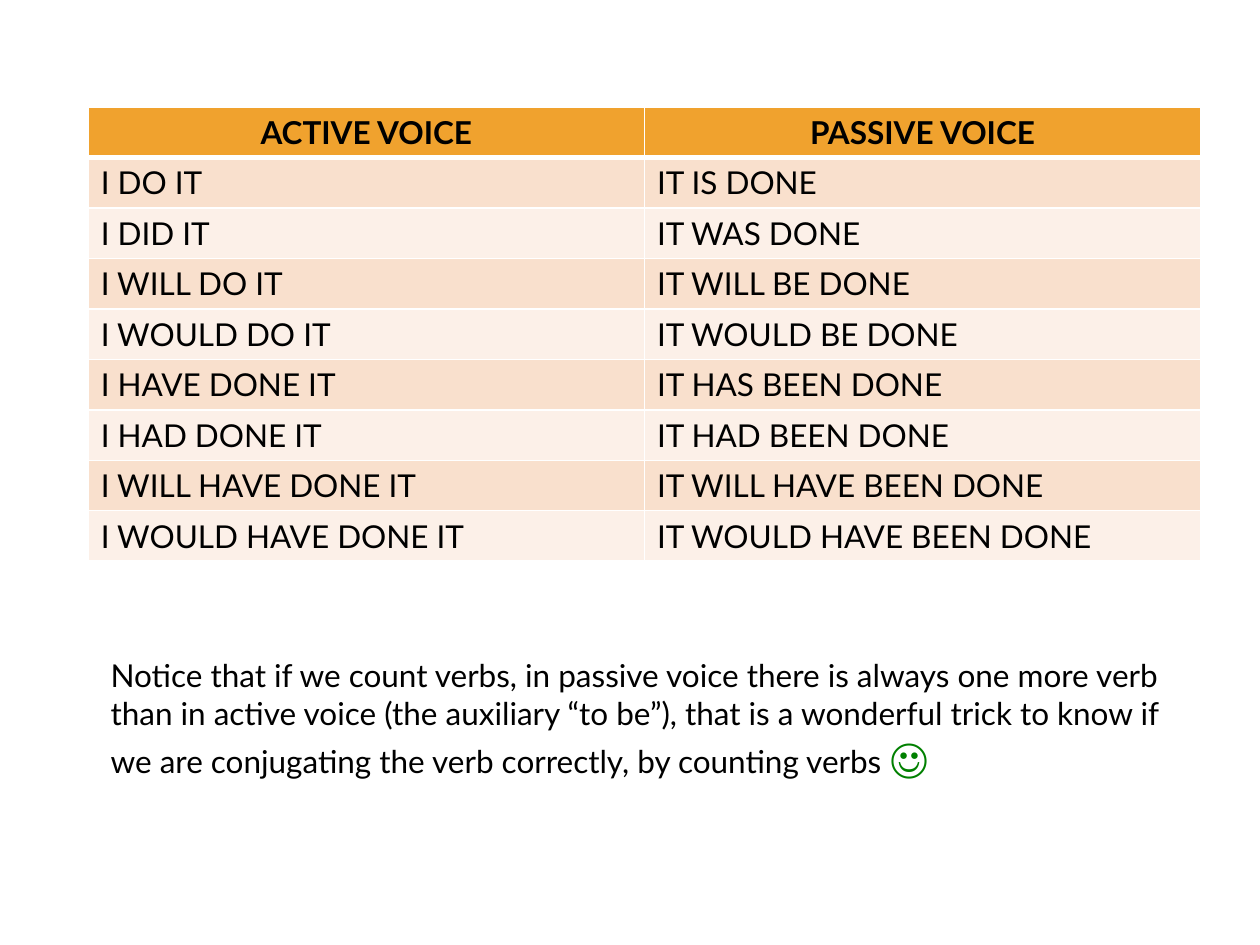
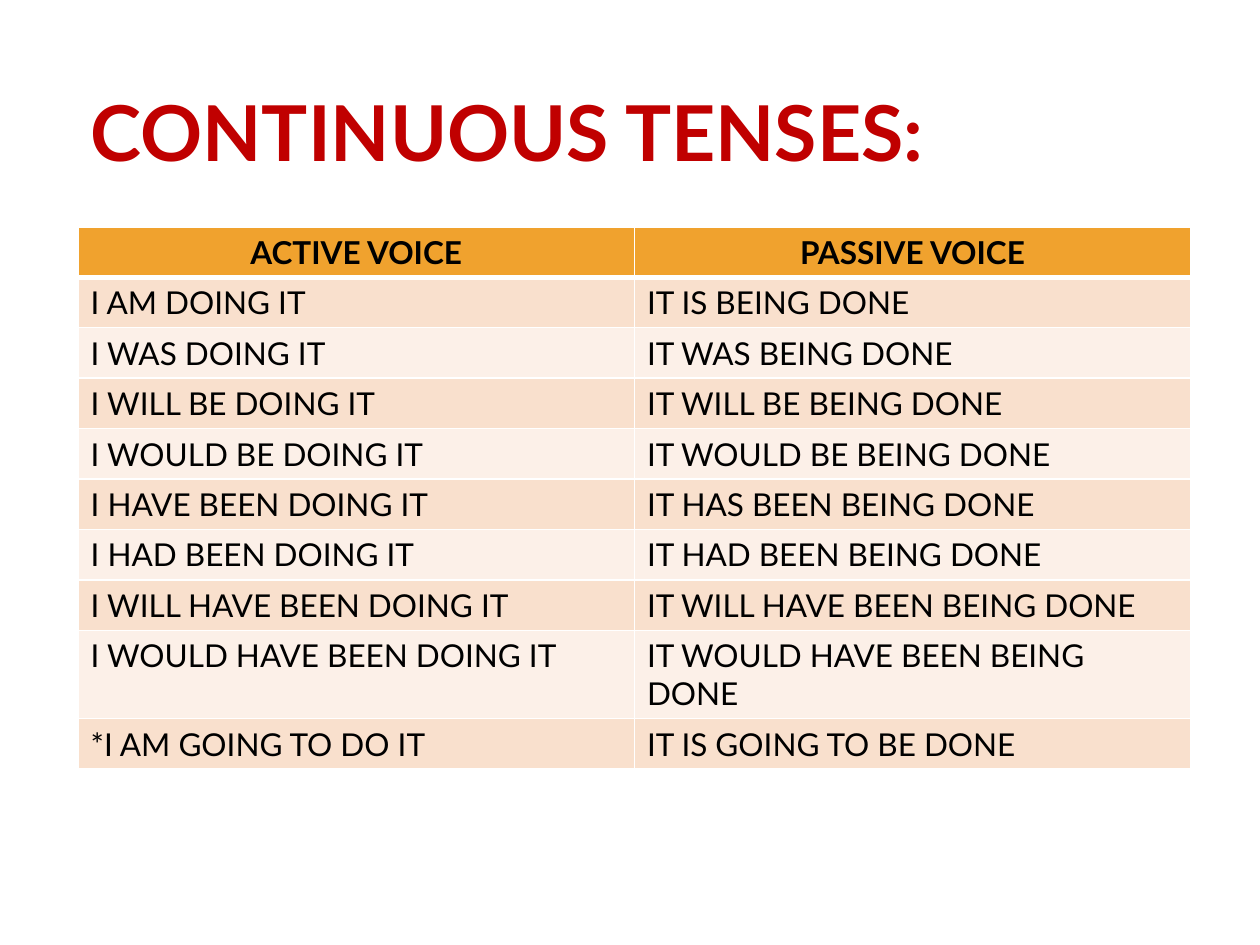
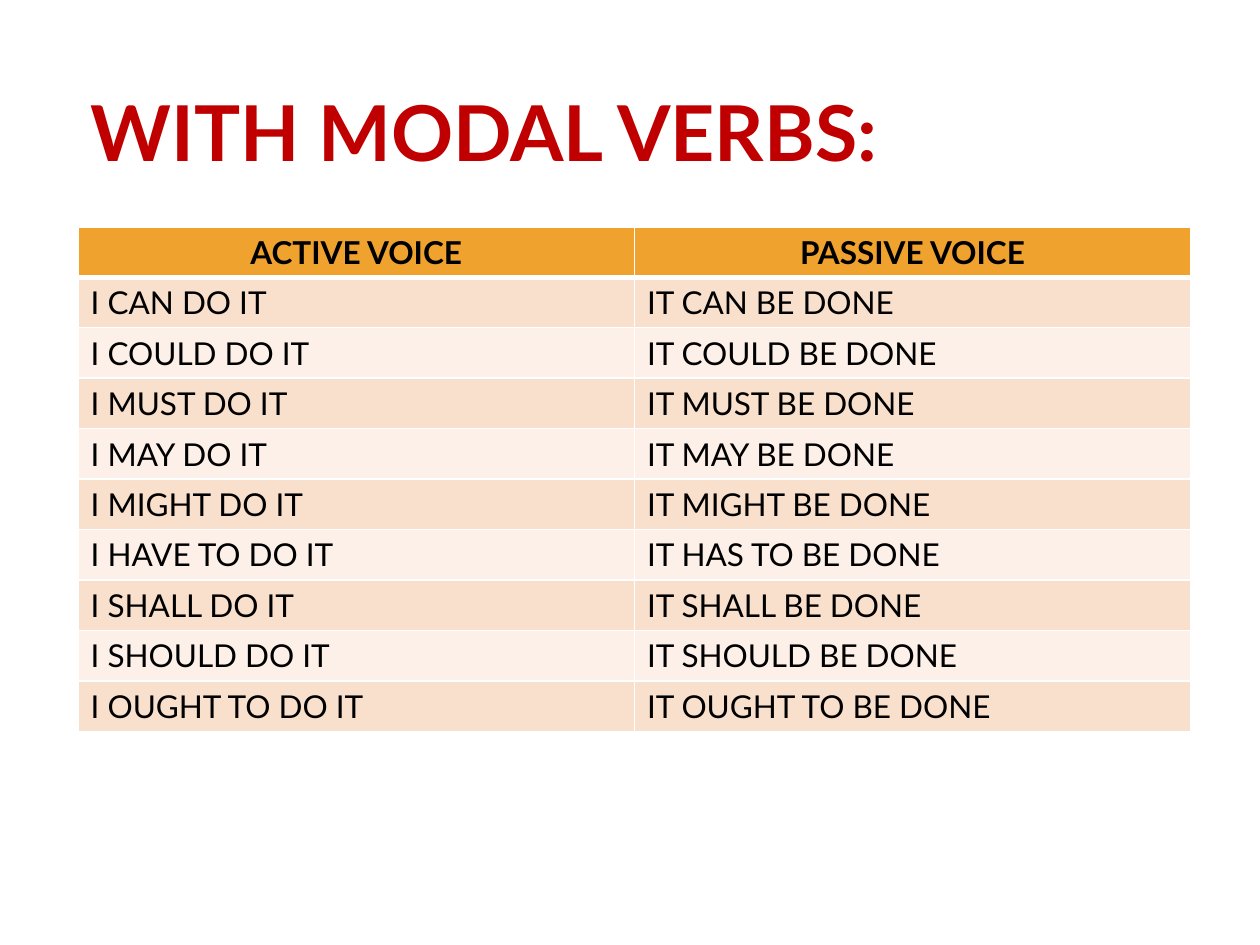
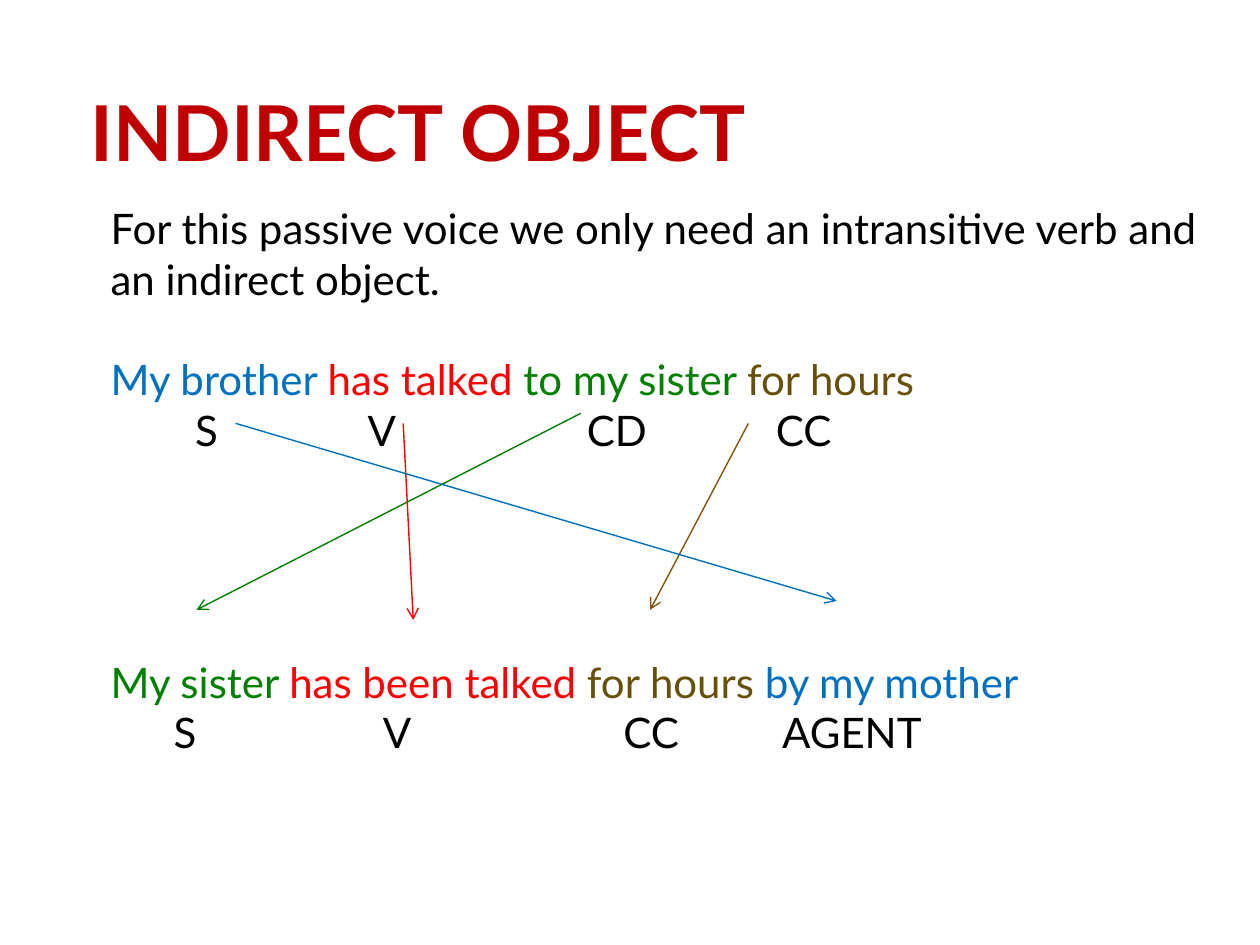
from dataclasses import dataclass
from typing import NamedTuple

from lxml import etree
from pptx import Presentation
from pptx.dml.color import RGBColor
from pptx.enum.shapes import MSO_CONNECTOR
from pptx.enum.text import MSO_AUTO_SIZE, PP_ALIGN
from pptx.oxml.ns import qn
from pptx.util import Inches, Pt

STRAIGHT = MSO_CONNECTOR.STRAIGHT
GROW_SHAPE = MSO_AUTO_SIZE.SHAPE_TO_FIT_TEXT
CENTER, LEFT = PP_ALIGN.CENTER, PP_ALIGN.LEFT
BLANK_LAYOUT = 6


# Theme
@dataclass(frozen=True)
class Theme:
    font: str = "Lato"
    text: str = "000000"
    title: str = "C00000"
    header: str = "F0A22E"
    bands: tuple[str, str] = ("F9E0CD", "FCF0E8")
    border: str = "FFFFFF"
    blue: str = "0070C0"
    red: str = "FF0000"
    green: str = "008000"
    olive: str = "695008"
    brown: str = "85540A"
    title_size: int = 44
    large_size: int = 24
    body_size: int = 18
    thin_border: int = 1
    thick_border: int = 3
    arrow_width: float = 0.79


THEME = Theme()
LINE_HEIGHT = 1.2 * THEME.large_size
ROW_HEIGHT = 0.4
TABLE_WIDTH = 8.83


class Box(NamedTuple):
    left: float
    top: float
    width: float
    height: float


class Span(NamedTuple):
    text: str
    color: str = THEME.text
    size: int = THEME.large_size
    bold: bool = False


class Line(NamedTuple):
    spans: list[Span]
    blank_lines_before: int = 0
    tab_stops: tuple[float, ...] = ()


class Arrow(NamedTuple):
    start: tuple[float, float]
    end: tuple[float, float]
    color: str


class VoiceTable(NamedTuple):
    left: float
    top: float
    rows: list[tuple[str, str]]


TITLE_BOX = Box(0.62, 0.62, 8.91, 0.84)
HEADINGS = ("ACTIVE VOICE", "PASSIVE VOICE")

# Slide contents
SIMPLE_TENSES = VoiceTable(0.7, 0.85, [
    ("I DO IT", "IT IS DONE"),
    ("I DID IT", "IT WAS DONE"),
    ("I WILL DO IT", "IT WILL BE DONE"),
    ("I WOULD DO IT", "IT WOULD BE DONE"),
    ("I HAVE DONE IT", "IT HAS BEEN DONE"),
    ("I HAD DONE IT", "IT HAD BEEN DONE"),
    ("I WILL HAVE DONE IT", "IT WILL HAVE BEEN DONE"),
    ("I WOULD HAVE DONE IT", "IT WOULD HAVE BEEN DONE"),
])
CONTINUOUS_TENSES = VoiceTable(0.62, 1.8, [
    ("I AM DOING IT", "IT IS BEING DONE"),
    ("I WAS DOING IT", "IT WAS BEING DONE"),
    ("I WILL BE DOING IT", "IT WILL BE BEING DONE"),
    ("I WOULD BE DOING IT", "IT WOULD BE BEING DONE"),
    ("I HAVE BEEN DOING IT", "IT HAS BEEN BEING DONE"),
    ("I HAD BEEN DOING IT", "IT HAD BEEN BEING DONE"),
    ("I WILL HAVE BEEN DOING IT", "IT WILL HAVE BEEN BEING DONE"),
    ("I WOULD HAVE BEEN DOING IT", "IT WOULD HAVE BEEN BEING DONE"),
    ("*I AM GOING TO DO IT", "IT IS GOING TO BE DONE"),
])
MODAL_VERBS = VoiceTable(0.62, 1.8, [
    ("I CAN DO IT", "IT CAN BE DONE"),
    ("I COULD DO IT", "IT COULD BE DONE"),
    ("I MUST DO IT", "IT MUST BE DONE"),
    ("I MAY DO IT", "IT MAY BE DONE"),
    ("I MIGHT DO IT", "IT MIGHT BE DONE"),
    ("I HAVE TO DO IT", "IT HAS TO BE DONE"),
    ("I SHALL DO IT", "IT SHALL BE DONE"),
    ("I SHOULD DO IT", "IT SHOULD BE DONE"),
    ("I OUGHT TO DO IT", "IT OUGHT TO BE DONE"),
])
VERB_COUNT_NOTE = [Line([
    Span("Notice that if we count verbs, in passive voice there is always one more "
         "verb than in active voice (the auxiliary “to be”), that is a wonderful "
         "trick to know if we are conjugating the verb correctly, by counting verbs ",
         size=THEME.body_size),
    Span("☺", THEME.green, bold=True),
])]
INDIRECT_OBJECT_LINES = [
    Line([Span("For this passive voice we only need an intransitive verb and "
               "an indirect object.")]),
    Line([Span("My brother ", THEME.blue), Span("has talked ", THEME.red),
          Span("to my sister ", THEME.green), Span("for hours", THEME.olive)],
         blank_lines_before=1),
    Line([Span("\tS\tV\tCD\tCC")], tab_stops=(0.67, 2.04, 3.78, 5.28)),
    Line([Span("My sister ", THEME.green), Span("has been talked ", THEME.red),
          Span("for hours ", THEME.olive), Span("by my mother", THEME.blue)],
         blank_lines_before=4),
    Line([Span("\tS\tV\tCC\tAGENT")], tab_stops=(0.5, 2.16, 4.07, 5.33)),
]
WORD_ORDER_ARROWS = [
    Arrow((4.61, 3.28), (1.56, 4.84), THEME.green),
    Arrow((3.2, 3.36), (3.28, 4.92), THEME.red),
    Arrow((5.94, 3.36), (5.16, 4.84), THEME.brown),
    Arrow((1.87, 3.36), (6.64, 4.77), THEME.blue),
]


# Text
def add_span(paragraph, span: Span) -> None:
    run = paragraph.add_run()
    run.text = span.text
    run.font.color.rgb = RGBColor.from_string(span.color)
    formats = {"name": THEME.font, "size": Pt(span.size), "bold": span.bold}
    for name, value in formats.items():
        setattr(run.font, name, value)


def set_tab_stops(paragraph, stops: tuple[float, ...]) -> None:
    properties = paragraph._p.get_or_add_pPr()
    tab_list = etree.SubElement(properties, qn("a:tabLst"))
    for stop in stops:
        etree.SubElement(tab_list, qn("a:tab"), pos=str(Inches(stop)), algn="l")


def add_text(slide, box: Box, lines: list[Line]) -> None:
    frame = slide.shapes.add_textbox(*map(Inches, box)).text_frame
    frame.word_wrap = True
    frame.auto_size = GROW_SHAPE
    for index, line in enumerate(lines):
        paragraph = frame.add_paragraph() if index else frame.paragraphs[0]
        if line.blank_lines_before:
            paragraph.space_before = Pt(line.blank_lines_before * LINE_HEIGHT)
        if line.tab_stops:
            set_tab_stops(paragraph, line.tab_stops)
        for span in line.spans:
            add_span(paragraph, span)


def add_title(slide, text: str) -> None:
    title = Span(text, THEME.title, THEME.title_size, bold=True)
    add_text(slide, TITLE_BOX, [Line([title])])


# Tables
def set_borders(cell, row: int) -> None:
    widths = {"a:lnL": THEME.thin_border, "a:lnR": THEME.thin_border,
              "a:lnT": THEME.thick_border if row == 1 else THEME.thin_border,
              "a:lnB": THEME.thick_border if row == 0 else THEME.thin_border}
    properties = cell._tc.get_or_add_tcPr()
    for position, (tag, width) in enumerate(widths.items()):
        border = etree.Element(qn(tag), w=str(Pt(width)))
        fill = etree.SubElement(border, qn("a:solidFill"))
        etree.SubElement(fill, qn("a:srgbClr"), val=THEME.border)
        properties.insert(position, border)


def add_voice_table(slide, content: VoiceTable) -> None:
    rows = [HEADINGS, *content.rows]
    box = Box(content.left, content.top, TABLE_WIDTH, ROW_HEIGHT * len(rows))
    table = slide.shapes.add_table(
        len(rows), len(HEADINGS), *map(Inches, box)).table
    for row, texts in enumerate(rows):
        is_header = row == 0
        color = THEME.header if is_header else THEME.bands[(row - 1) % 2]
        for column, text in enumerate(texts):
            cell = table.cell(row, column)
            cell.fill.solid()
            cell.fill.fore_color.rgb = RGBColor.from_string(color)
            set_borders(cell, row)
            paragraph = cell.text_frame.paragraphs[0]
            paragraph.alignment = CENTER if is_header else LEFT
            add_span(paragraph, Span(text, size=THEME.body_size, bold=is_header))


# Arrows
def add_arrow(slide, arrow: Arrow) -> None:
    connector = slide.shapes.add_connector(
        STRAIGHT, *map(Inches, arrow.start + arrow.end))
    connector.line.color.rgb = RGBColor.from_string(arrow.color)
    connector.line.width = Pt(THEME.arrow_width)
    properties = connector._element.spPr
    etree.SubElement(properties.find(qn("a:ln")), qn("a:tailEnd"), type="arrow")
    etree.SubElement(properties, qn("a:effectLst"))


def main() -> None:
    presentation = Presentation()
    presentation.slide_width, presentation.slide_height = Inches(10), Inches(7.5)
    layout = presentation.slide_layouts[BLANK_LAYOUT]

    # Simple tenses
    slide = presentation.slides.add_slide(layout)
    add_voice_table(slide, SIMPLE_TENSES)
    add_text(slide, Box(0.78, 5.16, 8.67, 1.11), VERB_COUNT_NOTE)

    # Continuous tenses and modal verbs
    for title, content in (("CONTINUOUS TENSES:", CONTINUOUS_TENSES),
                           ("WITH MODAL VERBS:", MODAL_VERBS)):
        slide = presentation.slides.add_slide(layout)
        add_title(slide, title)
        add_voice_table(slide, content)

    # Indirect object
    slide = presentation.slides.add_slide(layout)
    add_title(slide, "INDIRECT OBJECT")
    add_text(slide, Box(0.78, 1.56, 9.06, 4.95), INDIRECT_OBJECT_LINES)
    for arrow in WORD_ORDER_ARROWS:
        add_arrow(slide, arrow)

    presentation.save("out.pptx")


if __name__ == "__main__":
    main()
